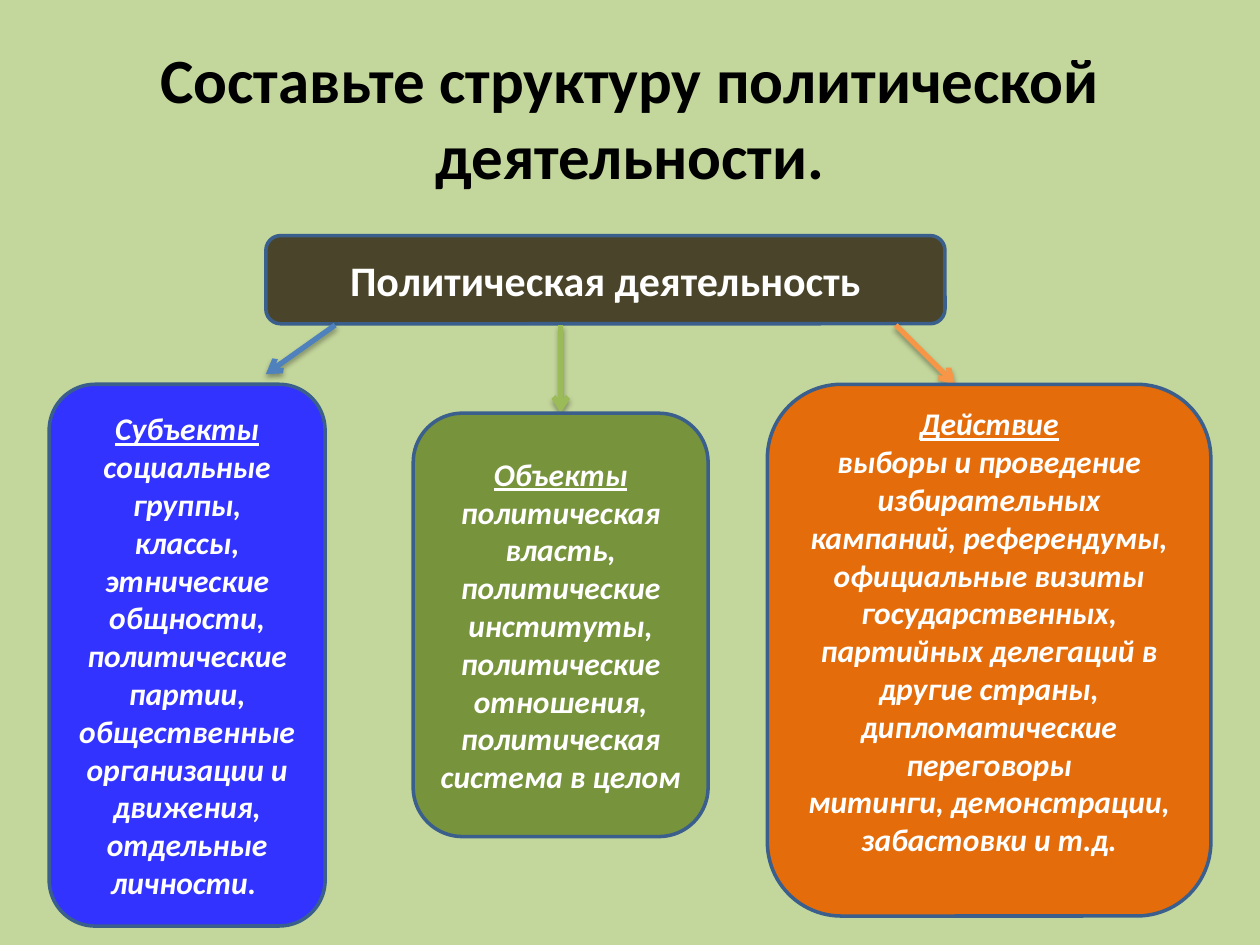
"""Build a slide showing the structure of political activity."""
from dataclasses import dataclass

import pptx
import pptx.dml.color
import pptx.enum.shapes
import pptx.enum.text
import pptx.oxml
import pptx.oxml.ns
import pptx.util
from pptx.util import Inches


@dataclass(frozen=True)
class Theme:
    """Colours, font and type sizes of the slide."""
    font: str = "Calibri"
    background: str = "C3D69B"
    title: str = "000000"
    text: str = "FFFFFF"
    outline: str = "3A5F8C"
    root: str = "4A452A"
    subjects: str = "3333FF"
    objects: str = "77933C"
    action: str = "E46C0A"
    to_subjects: str = "4F81BD"
    to_objects: str = "9BBB59"
    to_action: str = "F79646"
    title_size: int = 36
    root_size: int = 24
    branch_size: int = 18
    outline_width: int = 2
    arrow_width: int = 3


THEME = Theme()

BRANCHES = [
    ((0.39, 3.05, 2.19, 4.3), THEME.subjects, 0.05, "Субъекты", [
        "социальные группы,",
        "классы, этнические общности,",
        "политические партии, общественные организации и движения, "
        "отдельные личности. ",
    ]),
    ((3.28, 3.28, 2.34, 3.36), THEME.objects, 0.05, "Объекты", [
        "политическая власть,",
        "политические институты,",
        "политические отношения,",
        "политическая система в целом",
    ]),
    ((6.09, 3.05, 3.52, 4.22), THEME.action, 0.35, "Действие", [
        "выборы и проведение избирательных кампаний, референдумы, "
        "официальные визиты государственных, партийных делегаций в другие "
        "страны, дипломатические переговоры",
        "митинги, демонстрации, забастовки и т.д.",
    ]),
]

ARROWS = [
    ((2.66, 2.58), (2.11, 2.97), THEME.to_subjects),
    ((4.45, 2.58), (4.45, 3.28), THEME.to_objects),
    ((7.11, 2.58), (7.58, 3.05), THEME.to_action),
]


def rgb(value):
    """Turn a hex string into a colour."""
    return pptx.dml.color.RGBColor.from_string(value)


def centre_text(frame):
    """Wrap the text and centre it vertically."""
    frame.word_wrap = True
    frame.vertical_anchor = pptx.enum.text.MSO_ANCHOR.MIDDLE


def add_run(paragraph, words, size, colour, italic=False, underline=False):
    """Add one bold run to a centred paragraph."""
    paragraph.alignment = pptx.enum.text.PP_ALIGN.CENTER
    run = paragraph.add_run()
    run.text = words
    run.font.name = THEME.font
    run.font.size = pptx.util.Pt(size)
    run.font.color.rgb = rgb(colour)
    run.font.bold = True
    run.font.italic = italic
    run.font.underline = underline


def add_title(slide, words):
    """Add the slide heading."""
    heading = slide.shapes.add_textbox(
        Inches(0.5), Inches(0.3), Inches(9), Inches(1.25))
    centre_text(heading.text_frame)
    add_run(heading.text_frame.paragraphs[0], words, THEME.title_size, THEME.title)


def add_box(slide, place, colour):
    """Add a rounded box and return its text frame."""
    box = slide.shapes.add_shape(
        pptx.enum.shapes.MSO_SHAPE.ROUNDED_RECTANGLE, *map(Inches, place))
    box.shadow.inherit = False
    box.fill.solid()
    box.fill.fore_color.rgb = rgb(colour)
    box.line.color.rgb = rgb(THEME.outline)
    box.line.width = pptx.util.Pt(THEME.outline_width)
    centre_text(box.text_frame)
    return box.text_frame


def add_branch(slide, place, colour, bottom_inset, name, examples):
    """Add a branch box with an underlined name above its examples."""
    frame = add_box(slide, place, colour)
    frame.margin_bottom = Inches(bottom_inset)
    add_run(frame.paragraphs[0], name, THEME.branch_size, THEME.text,
            italic=True, underline=True)
    for example in examples:
        add_run(frame.add_paragraph(), example, THEME.branch_size, THEME.text,
                italic=True)


def add_arrow(slide, start, end, colour):
    """Add an arrow with an open head and a soft shadow below."""
    arrow = slide.shapes.add_connector(
        pptx.enum.shapes.MSO_CONNECTOR.STRAIGHT, *map(Inches, start + end))
    arrow.line.color.rgb = rgb(colour)
    arrow.line.width = pptx.util.Pt(THEME.arrow_width)
    namespace = pptx.oxml.ns.nsdecls("a")
    arrow.line._get_or_add_ln().append(
        pptx.oxml.parse_xml(f'<a:tailEnd {namespace} type="arrow"/>'))
    blur, distance = pptx.util.Pt(3.1), pptx.util.Pt(1.8)
    arrow._element.spPr.append(pptx.oxml.parse_xml(
        f'<a:effectLst {namespace}><a:outerShdw blurRad="{blur}" '
        f'dist="{distance}" dir="5400000" rotWithShape="0">'
        '<a:srgbClr val="000000"><a:alpha val="35000"/></a:srgbClr>'
        '</a:outerShdw></a:effectLst>'))


def main():
    """Build and save the slide."""
    deck = pptx.Presentation()
    deck.slide_width, deck.slide_height = Inches(10), Inches(7.5)
    slide = deck.slides.add_slide(deck.slide_layouts[6])
    slide.background.fill.solid()
    slide.background.fill.fore_color.rgb = rgb(THEME.background)

    add_title(slide, "Составьте структуру политической деятельности.")
    root = add_box(slide, (2.11, 1.87, 5.39, 0.7), THEME.root)
    add_run(root.paragraphs[0], "Политическая деятельность",
            THEME.root_size, THEME.text)
    for arrow in ARROWS:
        add_arrow(slide, *arrow)
    for branch in BRANCHES:
        add_branch(slide, *branch)
    deck.save("out.pptx")


if __name__ == "__main__":
    main()
